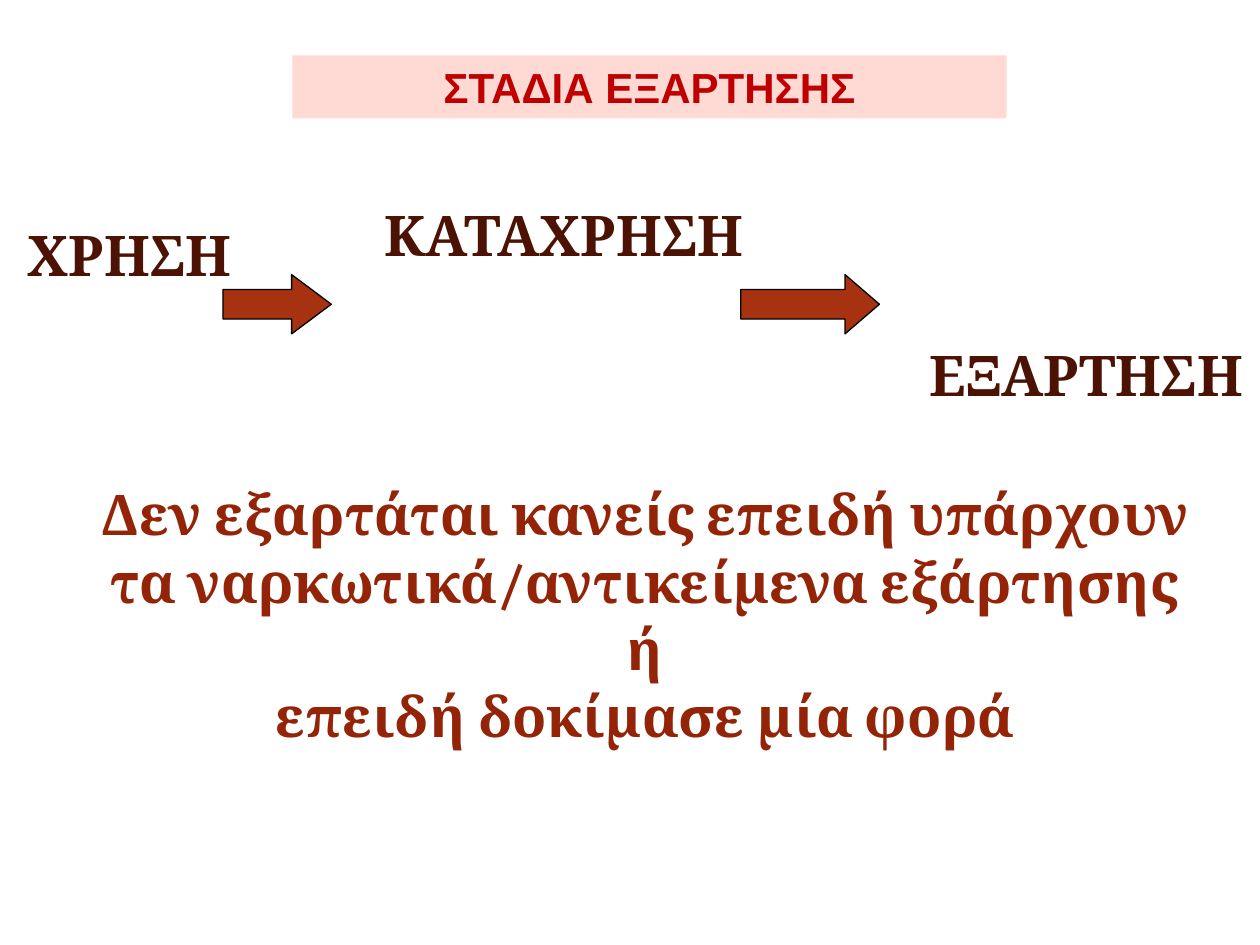
import pptx
import pptx.util
from pptx.dml.color import RGBColor
from pptx.enum.shapes import MSO_SHAPE
from pptx.enum.text import MSO_ANCHOR, MSO_AUTO_SIZE, PP_ALIGN

Inches, Pt = pptx.util.Inches, pptx.util.Pt

TITLE_RED = RGBColor(0xC0, 0x00, 0x00)
TITLE_FILL = RGBColor(0xFF, 0xD9, 0xD3)
STAGE_BROWN = RGBColor(0x4C, 0x13, 0x04)
MESSAGE_RED = RGBColor(0x94, 0x24, 0x08)
ARROW_FILL = RGBColor(0xA6, 0x32, 0x12)
BLACK = RGBColor(0, 0, 0)

# Content: boxes are left, top, width, height in inches
TITLE = "ΣΤΑΔΙΑ ΕΞΑΡΤΗΣΗΣ"
TITLE_BOX = (2.32, 0.44, 5.67, 0.5)
STAGES = [
    ("ΧΡΗΣΗ", (0.12, 1.7, 1.89, 0.64)),
    ("ΚΑΤΑΧΡΗΣΗ", (2.95, 1.54, 3.07, 0.63)),
    ("ΕΞΑΡΤΗΣΗ", (7.28, 2.65, 2.72, 0.63)),
]
ARROW_TOP, ARROW_HEIGHT = 2.18, 0.47
ARROWS = [(1.77, 0.86, 0.67), (5.88, 1.1, 0.58)]  # left, width, head ratio
MESSAGE = [
    "Δεν εξαρτάται κανείς επειδή υπάρχουν τα ναρκωτικά/αντικείμενα εξάρτησης ή",
    "επειδή δοκίμασε μία φορά",
]
MESSAGE_BOX = (0.67, 3.76, 8.9, 1.72)


def write_text(shape, lines, font_name, size, color, alignment):
    frame = shape.text_frame
    frame.word_wrap = True
    frame.auto_size = MSO_AUTO_SIZE.SHAPE_TO_FIT_TEXT
    frame.vertical_anchor = MSO_ANCHOR.TOP
    frame.text = "\n".join(lines)
    for paragraph in frame.paragraphs:
        paragraph.alignment = alignment
        font = paragraph.font
        font.name, font.size, font.bold = font_name, Pt(size), True
        font.color.rgb = color


def add_shape(slide, kind, box, fill):
    shape = slide.shapes.add_shape(kind, *map(Inches, box))
    shape.shadow.inherit = False
    shape.fill.solid()
    shape.fill.fore_color.rgb = fill
    return shape


def main():
    presentation = pptx.Presentation()
    presentation.slide_width, presentation.slide_height = Inches(10), Inches(7.5)
    slide = presentation.slides.add_slide(presentation.slide_layouts[6])

    # Closing message
    message = slide.shapes.add_textbox(*map(Inches, MESSAGE_BOX))
    write_text(message, MESSAGE, "Cambria", 32, MESSAGE_RED, PP_ALIGN.CENTER)

    # Stages
    for name, box in STAGES:
        label = slide.shapes.add_textbox(*map(Inches, box))
        write_text(label, [name], "Cambria", 32, STAGE_BROWN, PP_ALIGN.LEFT)

    # Arrows between the stages
    for left, width, head in ARROWS:
        box = (left, ARROW_TOP, width, ARROW_HEIGHT)
        arrow = add_shape(slide, MSO_SHAPE.RIGHT_ARROW, box, ARROW_FILL)
        arrow.adjustments[1] = head
        arrow.line.color.rgb = BLACK
        arrow.line.width = Pt(0.75)

    # Title band
    title = add_shape(slide, MSO_SHAPE.RECTANGLE, TITLE_BOX, TITLE_FILL)
    title.line.fill.background()
    write_text(title, [TITLE], "Arial", 24, TITLE_RED, PP_ALIGN.CENTER)

    presentation.save("out.pptx")


if __name__ == "__main__":
    main()
